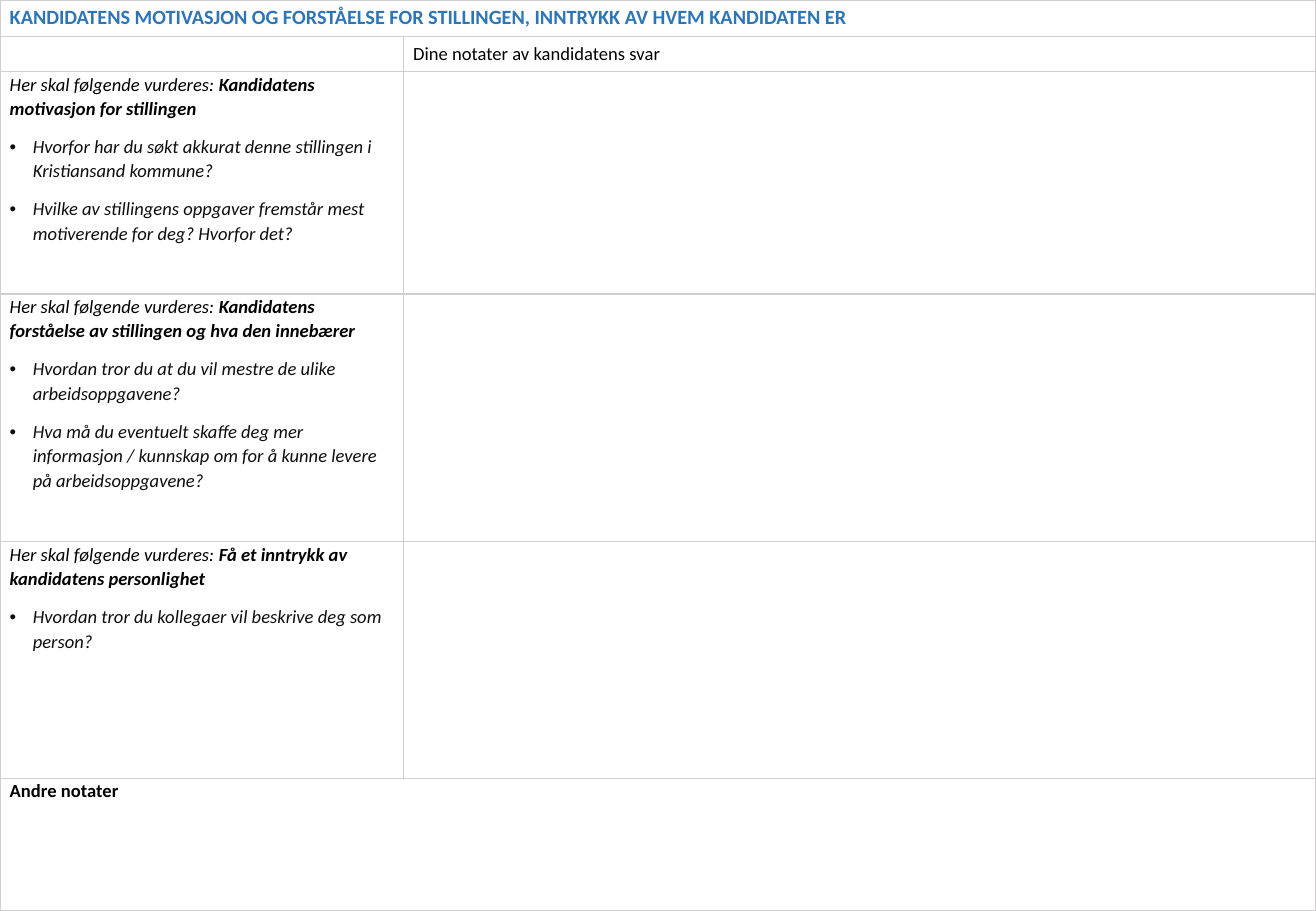
"""Build the interview form on candidate motivation, understanding and personality."""
from dataclasses import dataclass

from lxml.etree import SubElement
from pptx import Presentation
from pptx.dml.color import RGBColor
from pptx.enum.text import MSO_ANCHOR
from pptx.oxml.ns import qn
from pptx.util import Inches, Pt


@dataclass(frozen=True)
class Theme:
    font: str = "Calibri"
    heading: str = "2E75B6"
    text: str = "000000"
    question: str = "0D0D0D"
    border: str = "D0CECE"
    background: str = "FFFFFF"
    heading_size: int = 12
    text_size: int = 11
    border_width: int = 1


theme = Theme()
COLUMN_WIDTHS = [3.32, 7.51]
ROW_HEIGHTS = [0.3, 0.29, 1.83, 2.04, 1.95, 1.09]
HEADER_ROWS = 2
TOPICS = [
    ("Kandidatens motivasjon for stillingen", [
        "Hvorfor har du søkt akkurat denne stillingen i Kristiansand kommune?",
        "Hvilke av stillingens oppgaver fremstår mest motiverende for deg? Hvorfor det?",
    ]),
    ("Kandidatens forståelse av stillingen og hva den innebærer", [
        "Hvordan tror du at du vil mestre de ulike arbeidsoppgavene?",
        "Hva må du eventuelt skaffe deg mer informasjon / kunnskap om for å kunne levere "
        "på arbeidsoppgavene?",
    ]),
    ("Få et inntrykk av kandidatens personlighet", [
        "Hvordan tror du kollegaer vil beskrive deg som person?",
    ]),
]


def add_run(paragraph, text, color=theme.text, size=theme.text_size, bold=False, italic=False):
    run = paragraph.add_run()
    run.text = text
    run.font.color.rgb = RGBColor.from_string(color)
    formats = {"name": theme.font, "size": Pt(size), "bold": bold, "italic": italic}
    for name, value in formats.items():
        setattr(run.font, name, value)


def format_body(paragraph):
    for name, value in {"line_spacing": 1.07, "space_after": Pt(8)}.items():
        setattr(paragraph, name, value)


presentation = Presentation()
presentation.slide_width = Inches(10.83)
presentation.slide_height = Inches(7.5)
slide = presentation.slides.add_slide(presentation.slide_layouts[6])

table = slide.shapes.add_table(
    len(ROW_HEIGHTS), len(COLUMN_WIDTHS), 0, 0, Inches(10.83), Inches(7.5)
).table
table.first_row = False
table.horz_banding = False
for column, width in zip(table.columns, COLUMN_WIDTHS):
    column.width = Inches(width)
for row, height in zip(table.rows, ROW_HEIGHTS):
    row.height = Inches(height)

for row_index, row in enumerate(table.rows):
    vertical_margin = Inches(0.04 if row_index < HEADER_ROWS else 0)
    margins = {
        "margin_left": Inches(0.08),
        "margin_right": Inches(0.08),
        "margin_top": vertical_margin,
        "margin_bottom": vertical_margin,
    }
    for cell in row.cells:
        for name, value in margins.items():
            setattr(cell, name, value)
        properties = cell._tc.get_or_add_tcPr()
        for side in ("a:lnL", "a:lnR", "a:lnT", "a:lnB"):
            line = SubElement(properties, qn(side), w=str(Pt(theme.border_width)))
            fill = SubElement(line, qn("a:solidFill"))
            SubElement(fill, qn("a:srgbClr"), val=theme.border)
        cell.fill.solid()
        cell.fill.fore_color.rgb = RGBColor.from_string(theme.background)
        paragraph = cell.text_frame.paragraphs[0]
        SubElement(paragraph._p, qn("a:endParaRPr"), sz=str(theme.text_size * 100))

last_row = len(ROW_HEIGHTS) - 1
for row_index in (0, last_row):
    table.cell(row_index, 0).merge(table.cell(row_index, 1))

add_run(
    table.cell(0, 0).text_frame.paragraphs[0],
    "KANDIDATENS MOTIVASJON OG FORSTÅELSE FOR STILLINGEN, INNTRYKK AV HVEM KANDIDATEN ER",
    theme.heading, theme.heading_size, bold=True,
)
notes_header = table.cell(1, 1)
notes_header.vertical_anchor = MSO_ANCHOR.MIDDLE
add_run(notes_header.text_frame.paragraphs[0], "Dine notater av kandidatens svar")

for row_index, (topic, questions) in enumerate(TOPICS, start=HEADER_ROWS):
    text_frame = table.cell(row_index, 0).text_frame
    paragraph = text_frame.paragraphs[0]
    format_body(paragraph)
    add_run(paragraph, "Her skal følgende vurderes: ", italic=True)
    add_run(paragraph, topic, bold=True, italic=True)
    for question in questions:
        paragraph = text_frame.add_paragraph()
        format_body(paragraph)
        add_run(paragraph, question, theme.question, italic=True)
        properties = paragraph._p.get_or_add_pPr()
        properties.set("marL", str(Inches(0.19)))
        properties.set("indent", str(-Inches(0.19)))
        SubElement(properties, qn("a:buFont"), typeface="Arial")
        SubElement(properties, qn("a:buChar"), char="•")

paragraph = table.cell(last_row, 0).text_frame.paragraphs[0]
format_body(paragraph)
add_run(paragraph, "Andre notater", bold=True)

presentation.save("out.pptx")
